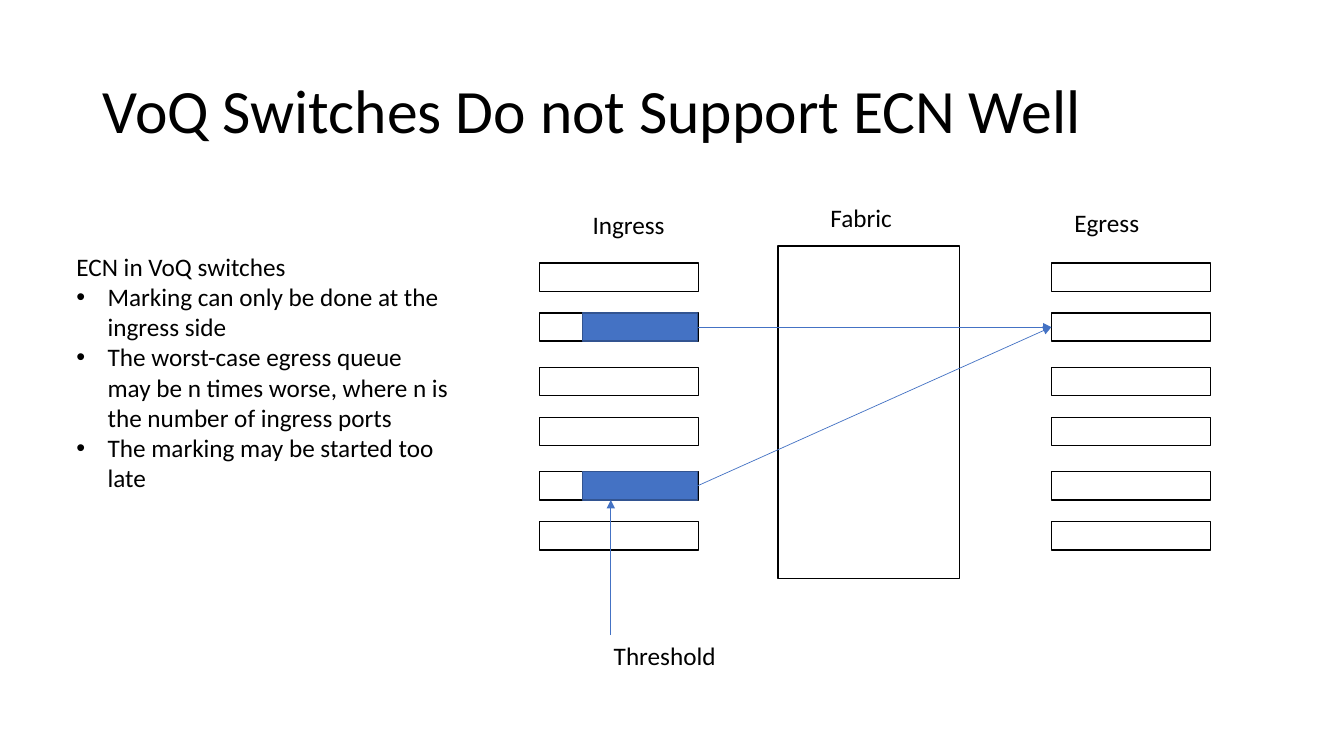
from dataclasses import dataclass

from lxml import etree
from pptx import Presentation
from pptx import util as u
from pptx.dml.color import RGBColor
from pptx.enum import shapes, text
from pptx.oxml.ns import qn

# Grid: 133.3 columns by 75 rows of square cells
CELL = u.Inches(0.1)
FONT = "Calibri"
BLACK, WHITE, BLUE, NAVY = "000000", "FFFFFF", "4472C4", "325491"


@dataclass(frozen=True)
class Area:
    col: float
    row: float
    cols: float
    rows: float

    def lengths(self) -> tuple[int, ...]:
        return tuple(cells(n) for n in (self.col, self.row, self.cols, self.rows))


@dataclass(frozen=True)
class Label:
    words: str
    area: Area


def cells(count: float) -> int:
    return round(count * CELL)


def color(hex_code: str) -> RGBColor:
    return RGBColor.from_string(hex_code)


def style(paragraph, size: float) -> None:
    paragraph.font.name = FONT
    paragraph.font.size = u.Pt(size)
    paragraph.font.color.rgb = color(BLACK)


def add_box(slide, area: Area, fill: str, line: str):
    box = slide.shapes.add_shape(shapes.MSO_SHAPE.RECTANGLE, *area.lengths())
    box.shadow.inherit = False
    box.fill.solid()
    box.fill.fore_color.rgb = color(fill)
    box.line.color.rgb = color(line)
    box.line.width = u.Pt(1)
    return box


def add_text(slide, area: Area, lines: list[str], wrap: bool):
    frame = slide.shapes.add_textbox(*area.lengths()).text_frame
    frame.word_wrap = wrap
    frame.auto_size = text.MSO_AUTO_SIZE.SHAPE_TO_FIT_TEXT
    frame.text = "\n".join(lines)
    for paragraph in frame.paragraphs:
        style(paragraph, 18)
    return frame


def add_bullet(paragraph) -> None:
    properties = paragraph._p.get_or_add_pPr()
    indent = u.Inches(0.31)
    properties.set("marL", str(indent))
    properties.set("indent", str(-indent))
    etree.SubElement(properties, qn("a:buFont")).set("typeface", "Arial")
    etree.SubElement(properties, qn("a:buChar")).set("char", "•")


def add_arrow(slide, start: tuple[float, float], end: tuple[float, float]):
    arrow = slide.shapes.add_connector(
        shapes.MSO_CONNECTOR.STRAIGHT, *(cells(n) for n in start + end))
    arrow.line.color.rgb = color(BLUE)
    arrow.line.width = u.Pt(0.5)
    etree.SubElement(arrow.line._get_or_add_ln(), qn("a:tailEnd")).set("type", "triangle")
    etree.SubElement(arrow._element.spPr, qn("a:effectLst"))
    return arrow


# Queues stand in pairs, three pairs to a bank
QUEUE_COLS, QUEUE_ROWS = 15.8, 2.8
INGRESS_COL, EGRESS_COL = 53.5, 104.3
FIRST_ROW, PAIR_PITCH, QUEUE_PITCH = 26.1, 10.35, 4.95
QUEUE_COUNT = 6
BACKLOG_COL, BACKLOG_COLS = 57.8, 11.4
BACKLOGGED = (1, 4)
TARGET = 1


def queue_row(index: int) -> float:
    pair, place = divmod(index, 2)
    return FIRST_ROW + pair * PAIR_PITCH + place * QUEUE_PITCH


def add_bank(slide, col: float) -> list:
    return [add_box(slide, Area(col, queue_row(i), QUEUE_COLS, QUEUE_ROWS), WHITE, BLACK)
            for i in range(QUEUE_COUNT)]


LABELS = [
    Label("Ingress", Area(57.8, 20.3, 9.2, 4)),
    Label("Egress", Area(105.6, 20.1, 8.5, 4)),
    Label("Threshold", Area(59.9, 63, 12.2, 4)),
    Label("Fabric", Area(81.4, 19.6, 8.2, 4)),
]
ECN_NOTES = [
    "ECN in VoQ switches",
    "Marking can only be done at the ingress side",
    "The worst-case egress queue may be n times worse, "
    "where n is the number of ingress ports",
    "The marking may be started too late",
]


def main() -> None:
    deck = Presentation()
    deck.slide_width, deck.slide_height = cells(133.33), cells(75)
    slide = deck.slides.add_slide(deck.slide_layouts[5])

    # Title
    title = slide.shapes.title
    title.left, title.top, title.width, title.height = Area(9.2, 4, 115, 14.5).lengths()
    title.text_frame.text = "VoQ Switches Do not Support ECN Well"
    title.text_frame.vertical_anchor = text.MSO_ANCHOR.MIDDLE
    heading = title.text_frame.paragraphs[0]
    heading.alignment = text.PP_ALIGN.LEFT
    heading.line_spacing = 0.9
    style(heading, 44)

    # Fabric and the two banks of queues
    add_box(slide, Area(77.2, 24.4, 18, 33), WHITE, BLACK)
    add_bank(slide, INGRESS_COL)
    egress = add_bank(slide, EGRESS_COL)
    backlogs = [
        add_box(slide, Area(BACKLOG_COL, queue_row(i), BACKLOG_COLS, QUEUE_ROWS), BLUE, NAVY)
        for i in BACKLOGGED]

    # Traffic from the backlogged queues to one egress queue
    middle = QUEUE_ROWS / 2
    for index, backlog in zip(BACKLOGGED, backlogs):
        flow = add_arrow(slide, (BACKLOG_COL + BACKLOG_COLS, queue_row(index) + middle),
                         (EGRESS_COL, queue_row(TARGET) + middle))
        flow.begin_connect(backlog, 3)
        flow.end_connect(egress[TARGET], 1)

    # Threshold pointer
    add_arrow(slide, (60.6, 63), (60.6, queue_row(BACKLOGGED[-1]) + QUEUE_ROWS))

    # Labels and notes
    for label in LABELS:
        add_text(slide, label.area, [label.words], wrap=False)
    notes = add_text(slide, Area(6.6, 24.4, 39, 25.2), ECN_NOTES, wrap=True)
    for point in notes.paragraphs[1:]:
        add_bullet(point)

    deck.save("out.pptx")


if __name__ == "__main__":
    main()
